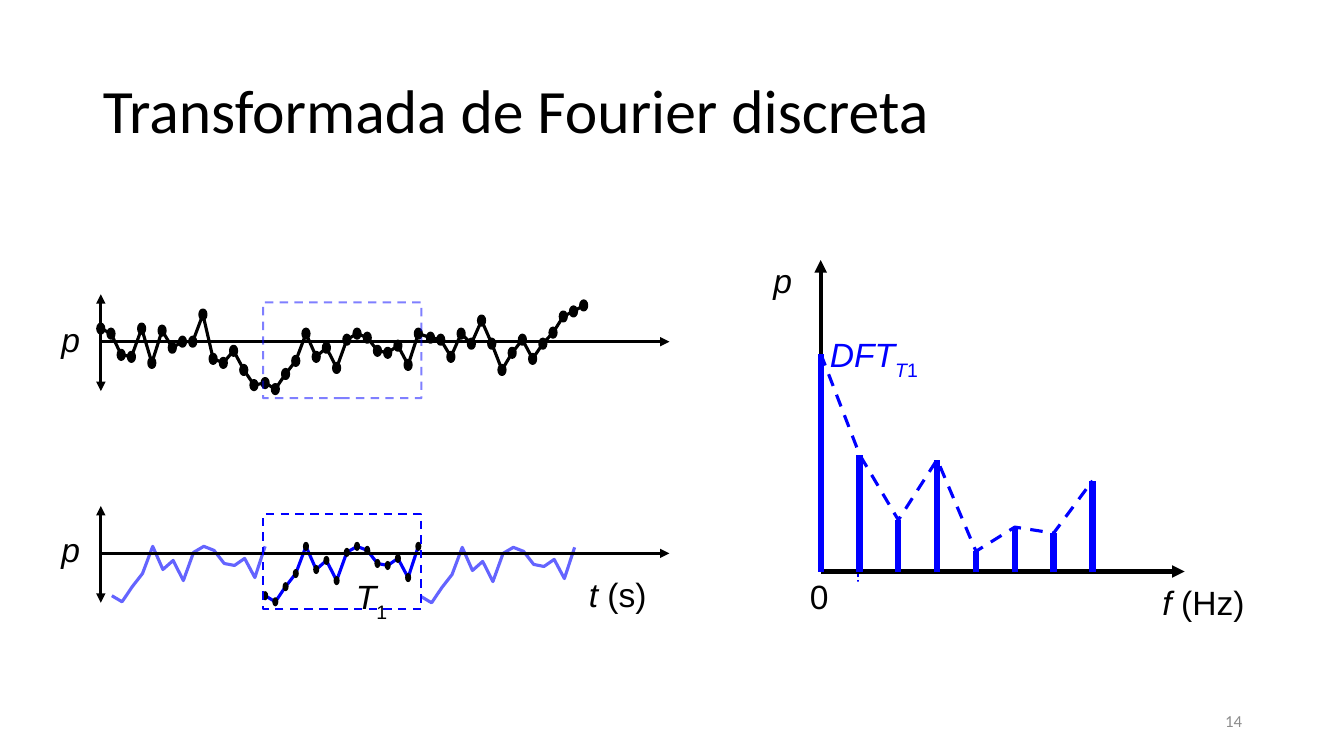
from lxml import etree
from pptx import Presentation
from pptx.dml.color import RGBColor
from pptx.enum.dml import MSO_LINE
from pptx.enum.shapes import MSO_CONNECTOR, MSO_SHAPE
from pptx.enum.text import MSO_ANCHOR, PP_ALIGN
from pptx.oxml.ns import qn
from pptx.util import Inches, Pt

BLACK = RGBColor(0x00, 0x00, 0x00)
BLUE = RGBColor(0x00, 0x00, 0xFF)
PALE_BLUE = RGBColor(0x64, 0x64, 0xFF)
GRAY = RGBColor(0x8C, 0x8C, 0x8C)
WHITE = RGBColor(0xFF, 0xFF, 0xFF)
DASH = MSO_LINE.DASH
STRAIGHT = MSO_CONNECTOR.STRAIGHT
RECTANGLE, OVAL = MSO_SHAPE.RECTANGLE, MSO_SHAPE.OVAL
LEFT, CENTER, RIGHT = PP_ALIGN.LEFT, PP_ALIGN.CENTER, PP_ALIGN.RIGHT
TOP, MIDDLE = MSO_ANCHOR.TOP, MSO_ANCHOR.MIDDLE

SAMPLE_STEP = 0.1013
WINDOW_SIZE = 16
WINDOW_STARTS = (1.0, 2.63, 4.27)
WINDOW_DROP = 2.11
SIGNAL_LEVELS = [
    3.26, 3.31, 3.52, 3.54, 3.26, 3.6, 3.28, 3.45, 3.39, 3.39, 3.12, 3.56, 3.6, 3.48, 3.67, 3.82,
    3.8, 3.86, 3.71, 3.58, 3.31, 3.54, 3.45, 3.65, 3.37, 3.31, 3.35, 3.48, 3.5, 3.43, 3.62, 3.31,
    3.35, 3.37, 3.54, 3.31, 3.41, 3.18, 3.41, 3.67, 3.5, 3.37, 3.56, 3.41, 3.3, 3.14, 3.09, 3.03,
]
SPECTRUM_TOPS = [3.51, 4.51, 5.16, 4.56, 5.47, 5.23, 5.29, 4.77]
SPECTRUM_LEFT, SPECTRUM_BASE, SPECTRUM_STEP = 8.14, 5.67, 0.385

prs = Presentation()
prs.slide_width = Inches(13.33)
prs.slide_height = Inches(7.5)
slide = prs.slides.add_slide(prs.slide_layouts[5])
shapes = slide.shapes

title = shapes.title
title.left, title.top = Inches(0.92), Inches(0.4)
title.width, title.height = Inches(11.5), Inches(1.45)
title.text_frame.vertical_anchor = MIDDLE
heading = title.text_frame.paragraphs[0]
heading.alignment = LEFT
heading.line_spacing = 0.9
heading_run = heading.add_run()
heading_run.text = "Transformada de Fourier discreta"
heading_run.font.size = Pt(44)
heading_run.font.name = "Calibri"
heading_run.font.color.rgb = BLACK

signal = [
    (WINDOW_STARTS[i // WINDOW_SIZE] + i % WINDOW_SIZE * SAMPLE_STEP, level)
    for i, level in enumerate(SIGNAL_LEVELS)
]
window = [(x, y + WINDOW_DROP) for x, y in signal[WINDOW_SIZE:2 * WINDOW_SIZE]]
window_before = [(x - 1.52, y) for x, y in window]
window_after = [(x + 1.55, y + 0.01) for x, y in window]
spectrum = [(SPECTRUM_LEFT + i * SPECTRUM_STEP, top) for i, top in enumerate(SPECTRUM_TOPS)]

curves = [
    (spectrum, BLUE, DASH),
    (window, BLUE, None),
    (signal, BLACK, None),
    (window_after, PALE_BLUE, None),
    (window_before, PALE_BLUE, None),
]
for points, color, dash in curves:
    corners = [(Inches(x), Inches(y)) for x, y in points]
    builder = shapes.build_freeform(*corners[0])
    builder.add_line_segments(corners[1:], close=False)
    curve = builder.convert_to_shape()
    curve.shadow.inherit = False
    curve.fill.background()
    curve.line.color.rgb = color
    curve.line.width = Pt(2.25)
    curve.line.dash_style = dash

lines = [
    (8.51, 5.54, 8.51, 5.97, BLUE, 0.75, DASH, ()),
    (8.14, 5.67, 11.75, 5.67, BLACK, 3, None, ("tailEnd",)),
    (8.14, 5.67, 8.14, 2.58, BLACK, 3, None, ("tailEnd",)),
]
for axis_y in (3.39, 5.49):
    lines.append((1, axis_y, 6.64, axis_y, BLACK, 2.25, None, ("tailEnd",)))
    lines.append((1, axis_y + 0.49, 1, axis_y - 0.47, BLACK, 2.25, None, ("headEnd", "tailEnd")))
for x, top in spectrum:
    lines.append((x, SPECTRUM_BASE, x, top, BLUE, 4.5, None, ()))

for x1, y1, x2, y2, color, weight, dash, arrowheads in lines:
    line = shapes.add_connector(STRAIGHT, Inches(x1), Inches(y1), Inches(x2), Inches(y2))
    line.line.color.rgb = color
    line.line.width = Pt(weight)
    line.line.dash_style = dash
    for arrowhead in arrowheads:
        etree.SubElement(line.line._get_or_add_ln(), qn(f"a:{arrowhead}"), type="triangle")
    etree.SubElement(line._element.spPr, qn("a:effectLst"))

for points, outlined in ((signal, True), (window, False)):
    for x, y in points:
        dot = shapes.add_shape(
            OVAL, Inches(x - 0.03), Inches(y - 0.045), Inches(0.06), Inches(0.09))
        dot.shadow.inherit = False
        dot.fill.solid()
        dot.fill.fore_color.rgb = BLACK
        if outlined:
            dot.line.color.rgb = BLACK
            dot.line.width = Pt(2.25)
        else:
            dot.line.fill.background()

for frame_top, frame_height, opacity in ((5.1, 0.94, None), (3.0, 0.95, "50000")):
    frame = shapes.add_shape(
        RECTANGLE, Inches(2.61), Inches(frame_top), Inches(1.57), Inches(frame_height))
    frame.shadow.inherit = False
    frame.fill.background()
    frame.line.color.rgb = BLUE
    frame.line.width = Pt(1.5)
    frame.line.dash_style = DASH
    if opacity:
        frame_color = frame.line._get_or_add_ln().find(f".//{qn('a:srgbClr')}")
        etree.SubElement(frame_color, qn("a:alpha"), val=opacity)

labels = [
    (8.03, 5.71, 0.19, 0.26, CENTER, BLACK, [("0", False, False)]),
    (7.67, 2.58, 0.2, 0.26, LEFT, BLACK, [("p", True, False)]),
    (8.23, 3.31, 0.99, 0.28, LEFT, BLUE,
     [("DFT", True, False), ("T", True, True), ("1", False, True)]),
    (0.61, 3.16, 0.2, 0.42, LEFT, BLACK, [("p", True, False)]),
    (0.61, 5.25, 0.2, 0.42, LEFT, BLACK, [("p", True, False)]),
    (3.53, 5.71, 0.39, 0.31, LEFT, BLACK, [("T", True, False), ("1", False, True)]),
    (11.53, 5.77, 0.9, 0.26, LEFT, BLACK, [("f ", True, False), ("(Hz)", False, False)]),
    (5.84, 5.69, 0.65, 0.26, LEFT, BLACK, [("t ", True, False), ("(s)", False, False)]),
    (9.42, 6.95, 2.9, 0.4, RIGHT, GRAY, [("14", False, False)]),
]
for left, top, width, height, alignment, color, parts in labels:
    is_page_number = color == GRAY
    label = shapes.add_textbox(Inches(left), Inches(top), Inches(width), Inches(height))
    frame_text = label.text_frame
    frame_text.word_wrap = True
    frame_text.margin_left = frame_text.margin_right = 0
    frame_text.margin_top = frame_text.margin_bottom = 0
    frame_text.vertical_anchor = MIDDLE if is_page_number else TOP
    paragraph = frame_text.paragraphs[0]
    paragraph.alignment = alignment
    for text, italic, subscript in parts:
        run = paragraph.add_run()
        run.text = text
        run.font.name = "Calibri" if is_page_number else "Arial"
        run.font.size = Pt(12 if is_page_number else 24)
        run.font.italic = italic
        run.font.color.rgb = color
        if subscript:
            run.font._element.set("baseline", "-30000")

cover = shapes.add_shape(RECTANGLE, Inches(8.23), Inches(5.77), Inches(3.15), Inches(0.8))
cover.shadow.inherit = False
cover.fill.solid()
cover.fill.fore_color.rgb = WHITE
cover.line.fill.background()

prs.save("out.pptx")
